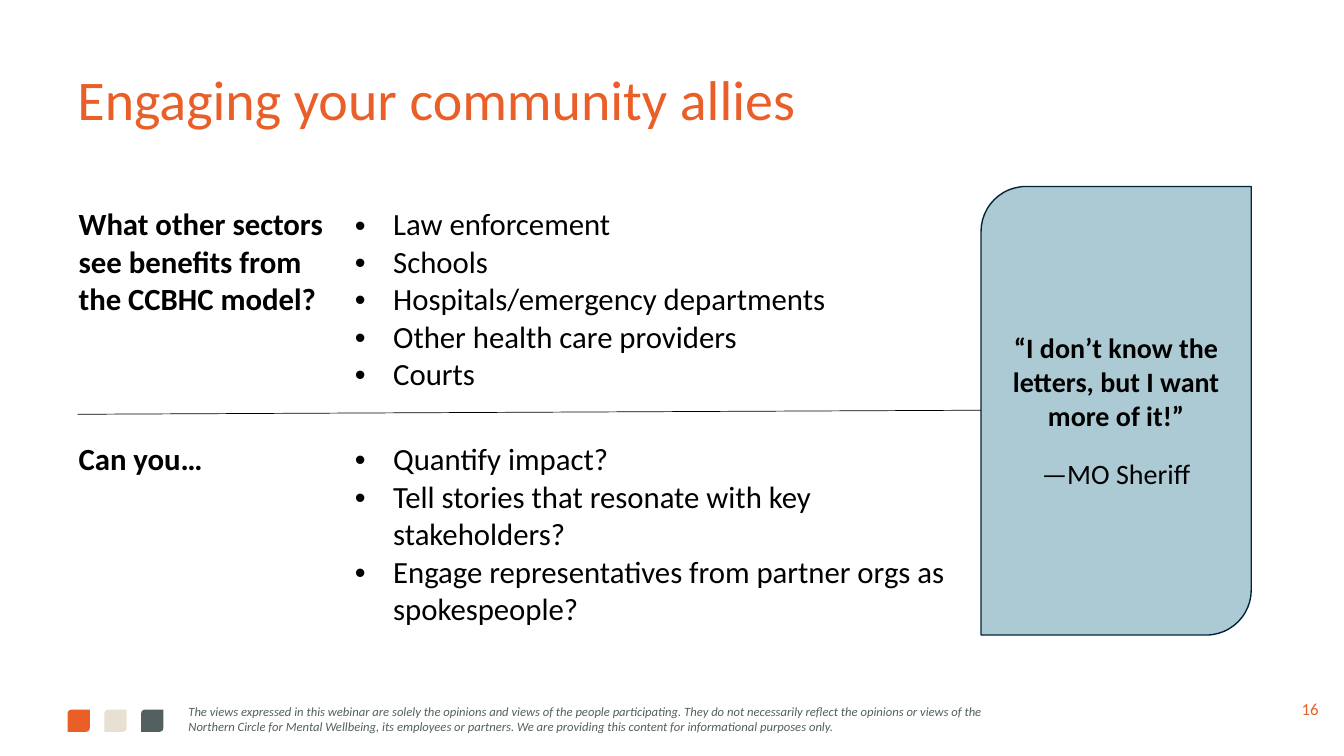
from lxml.etree import SubElement
from pptx import Presentation
from pptx.dml.color import RGBColor
from pptx.enum.shapes import MSO_CONNECTOR, MSO_SHAPE
from pptx.enum.text import MSO_ANCHOR, PP_ALIGN
from pptx.oxml.ns import qn
from pptx.util import Inches, Pt

COLORS = {
    "orange": "EA5E28",
    "sand": "E8E0D1",
    "slate": "53605F",
    "blue": "ACCAD3",
    "navy": "032338",
    "black": "000000",
}

QUESTIONS = [
    ("What other sectors see benefits from the CCBHC model?",
     ["Law enforcement", "Schools", "Hospitals/emergency departments",
      "Other health care providers", "Courts"]),
    ("Can you…",
     ["Quantify impact?", "Tell stories that resonate with key stakeholders?",
      "Engage representatives from partner orgs as spokespeople?"]),
]

DISCLAIMER = (
    "The views expressed in this webinar are solely the opinions and views of the people "
    "participating. They do not necessarily reflect the opinions or views of the\n"
    "Northern Circle for Mental Wellbeing, its employees or partners. "
    "We are providing this content for informational purposes only."
)


def rgb(name):
    return RGBColor.from_string(COLORS[name])


def write(frame, lines, size, color="black", bold=False, italic=False, align=None,
          spacing=None, before=None, bullet=False, font="Calibri"):
    """Add one paragraph per line of text, reusing the frame's empty first one."""
    for line in lines:
        first = not frame.text
        paragraph = frame.paragraphs[0] if first else frame.add_paragraph()
        if bullet:
            properties = paragraph._p.get_or_add_pPr()
            properties.set("marL", str(Inches(0.38)))
            properties.set("indent", str(-Inches(0.38)))
            SubElement(properties, qn("a:buFont"), typeface="Arial")
            SubElement(properties, qn("a:buChar"), char="•")
        if align is not None:
            paragraph.alignment = align
        if spacing is not None:
            paragraph.line_spacing = spacing
        if before is not None and not first:
            paragraph.space_before = Pt(before)
        for index, part in enumerate(line.split("\n")):
            if index:
                paragraph.add_line_break()
            run = paragraph.add_run()
            run.text = part
            run.font.name = font
            run.font.size = Pt(size)
            run.font.bold = bold
            run.font.italic = italic
            run.font.color.rgb = rgb(color)


class AlliesSlide:
    def __init__(self, presentation):
        self.shapes = presentation.slides.add_slide(presentation.slide_layouts[6]).shapes

    def text(self, box, content, anchor=MSO_ANCHOR.TOP, **style):
        frame = self.shapes.add_textbox(*map(Inches, box)).text_frame
        frame.word_wrap = True
        frame.vertical_anchor = anchor
        write(frame, [content], **style)

    def leaf(self, box, fill, outline=None):
        """Add a rectangle with two opposite corners rounded."""
        leaf = self.shapes.add_shape(MSO_SHAPE.ROUND_2_DIAG_RECTANGLE, *map(Inches, box))
        leaf.shadow.inherit = False
        leaf.fill.solid()
        leaf.fill.fore_color.rgb = rgb(fill)
        if outline:
            leaf.line.color.rgb = rgb(outline)
            leaf.line.width = Pt(1)
        else:
            leaf.line.fill.background()
        return leaf

    def question_table(self, box, widths, heights):
        table = self.shapes.add_table(len(heights), len(widths), *map(Inches, box)).table
        table.first_row = table.horz_banding = False
        for column, width in zip(table.columns, widths):
            column.width = Inches(width)
        for row, height, (question, answers) in zip(table.rows, heights, QUESTIONS):
            row.height = Inches(height)
            for cell in row.cells:
                cell.fill.background()
            write(row.cells[0].text_frame, [question], size=22, bold=True)
            write(row.cells[1].text_frame, answers, size=22, bullet=True)

    def quote(self, box, words, speaker):
        frame = self.leaf(box, "blue", outline="navy").text_frame
        frame.word_wrap = True
        frame.vertical_anchor = MSO_ANCHOR.MIDDLE
        write(frame, [words], size=20, bold=True, align=PP_ALIGN.CENTER)
        write(frame, [speaker], size=20, align=PP_ALIGN.CENTER, before=18)

    def rule(self, start, end):
        rule = self.shapes.add_connector(MSO_CONNECTOR.STRAIGHT, *map(Inches, start + end))
        rule.line.color.rgb = rgb("black")
        rule.line.width = Pt(0.5)
        SubElement(rule._element.spPr, qn("a:effectLst"))


def main():
    presentation = Presentation()
    presentation.slide_width = Inches(13.33)
    presentation.slide_height = Inches(7.5)
    slide = AlliesSlide(presentation)

    for index, color in enumerate(("orange", "sand", "slate")):
        slide.leaf((0.67 + index * 0.365, 7.04, 0.22, 0.22), color)
    slide.text((1.77, 6.93, 8.88, 0.4), DISCLAIMER, size=9, color="slate", italic=True)
    slide.text((0.67, 0.4, 11.99, 1.23), "Engaging your community allies",
               anchor=MSO_ANCHOR.MIDDLE, size=40, color="orange", spacing=0.9)
    slide.text((12.66, 6.83, 0.67, 0.4), "16", anchor=MSO_ANCHOR.MIDDLE,
               size=12, color="orange", align=PP_ALIGN.CENTER)
    slide.question_table((0.68, 2, 8.84, 4.23), widths=(2.74, 6.1), heights=(2.33, 1.9))
    slide.quote((9.73, 1.85, 2.68, 4.45),
                "“I don’t know the letters, but I want more of it!”", "—MO Sheriff")
    slide.rule((0.77, 4.11), (9.73, 4.07))

    presentation.save("out.pptx")


if __name__ == "__main__":
    main()
